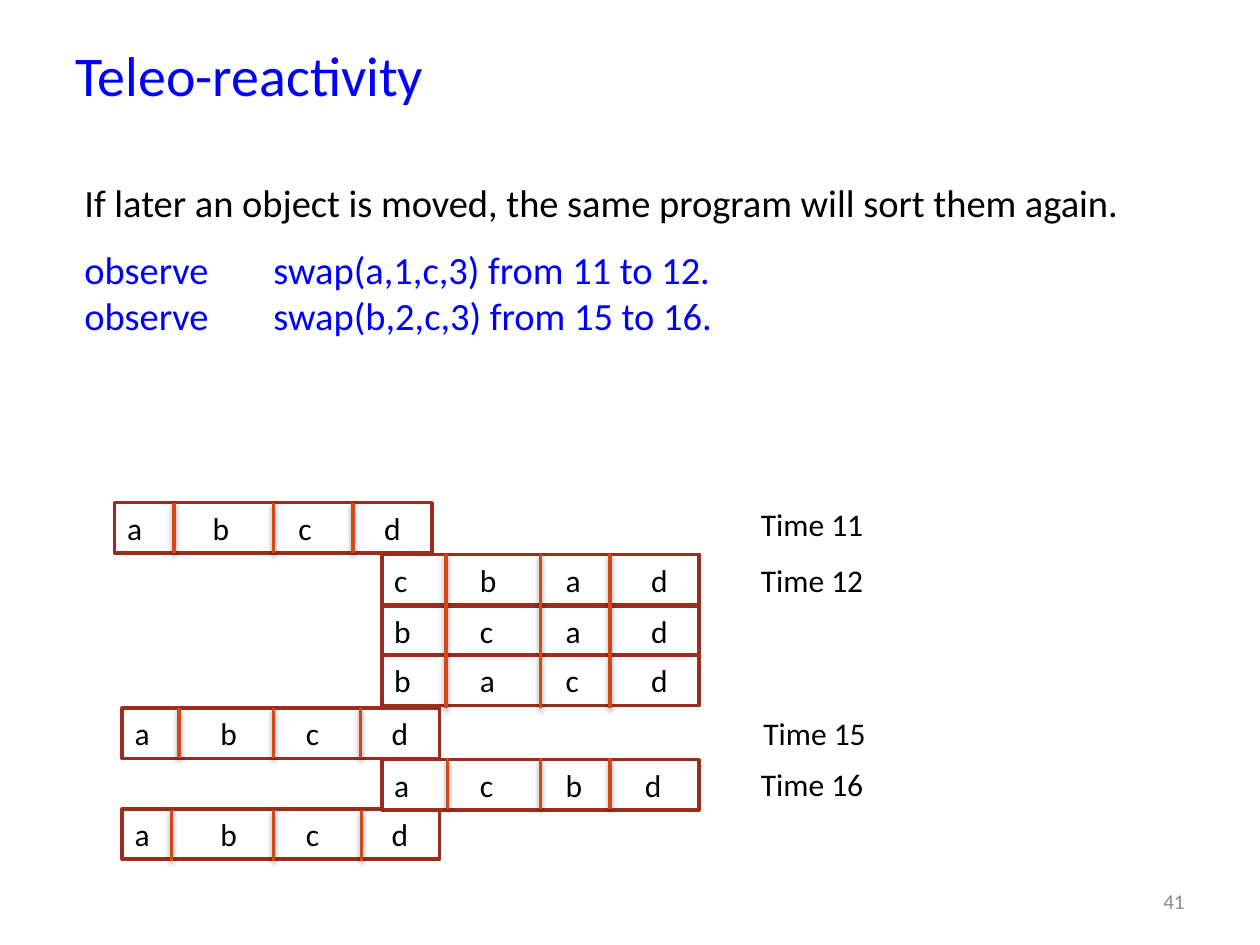
import pptx
import pptx.util
import pptx.dml.color
import pptx.enum.shapes
import pptx.enum.text
import lxml.etree
from pptx.oxml.ns import qn

Inches = pptx.util.Inches
Pt = pptx.util.Pt
RGBColor = pptx.dml.color.RGBColor
Align = pptx.enum.text.PP_ALIGN
Anchor = pptx.enum.text.MSO_ANCHOR

BLUE = RGBColor(0x00, 0x00, 0xFF)
BLACK = RGBColor(0x00, 0x00, 0x00)
WHITE = RGBColor(0xFF, 0xFF, 0xFF)
GRAY = RGBColor(0x8C, 0x8C, 0x8C)
BROWN = RGBColor(0x9B, 0x2D, 0x1F)
ORANGE = RGBColor(0xD3, 0x48, 0x17)

ROW_W, ROW_H = 2.52, 0.4
STEP = 0.68  # distance between the letters of a row

# left, top, letters, place of the last letter
ROWS = [
    (0.91, 3.99, "abcd", 3 * STEP),
    (3.03, 4.4, "cbad", 3 * STEP),
    (3.03, 4.81, "bcad", 3 * STEP),
    (3.03, 5.2, "bacd", 3 * STEP),
    (0.97, 5.62, "abcd", 3 * STEP),
    (0.97, 6.42, "abcd", 3 * STEP),
    (3.03, 6.03, "acbd", 1.99),
]
# top, height, x of each divider
CUTS = [
    (3.99, 0.4, (1.38, 2.17, 2.8)),
    (4.4, 1.22, (3.54, 4.29, 4.84)),
    (5.62, 0.4, (1.42, 2.17, 2.86)),
    (6.02, 0.4, (3.55, 4.29, 4.84)),
    (6.43, 0.4, (1.36, 2.17, 2.87)),
]
TIMES = [(5.94, 3.96, 11), (5.94, 4.4, 12), (5.96, 5.62, 15), (5.94, 6.02, 16)]


def write(frame, text, size=18, color=BLACK, align=Align.LEFT, gap=0, tabs=()):
    """Add a paragraph; gap is space before in points, tabs are in inches."""
    first = frame.paragraphs[0]
    para = first if not first.runs else frame.add_paragraph()
    para.alignment = align
    para.space_before = Pt(gap)
    run = para.add_run()
    run.text = text
    run.font.name = "Calibri"
    run.font.size = Pt(size)
    run.font.color.rgb = color
    if tabs:
        stops = lxml.etree.SubElement(para._p.get_or_add_pPr(), qn("a:tabLst"))
        for tab in tabs:
            lxml.etree.SubElement(stops, qn("a:tab"), pos=str(Inches(tab)), algn="l")


def add_box(slide, left, top, width, height, anchor=Anchor.TOP):
    box = slide.shapes.add_textbox(
        Inches(left), Inches(top), Inches(width), Inches(height))
    frame = box.text_frame
    frame.word_wrap = True
    frame.vertical_anchor = anchor
    return frame


def add_title(slide, *box):
    write(add_box(slide, *box, anchor=Anchor.MIDDLE), "Teleo-reactivity", size=32, color=BLUE)


def add_body(slide, *box):
    frame = add_box(slide, *box)
    frame.margin_left = frame.margin_right = 0
    frame.margin_top = frame.margin_bottom = 0
    write(frame, "If later an object is moved, the same program will sort them again.", size=22)
    lines = ["swap(a,1,c,3) from 11 to 12.", "swap(b,2,c,3) from 15 to 16."]
    for line, gap in zip(lines, (12, 0)):
        write(frame, "observe\t" + line, size=22, color=BLUE, gap=gap, tabs=[1.5])


def add_page(slide, *box):
    write(add_box(slide, *box, anchor=Anchor.MIDDLE), "41", size=12, color=GRAY, align=Align.RIGHT)


def add_row(slide, left, top, letters, last):
    row = slide.shapes.add_shape(
        pptx.enum.shapes.MSO_SHAPE.RECTANGLE,
        Inches(left), Inches(top), Inches(ROW_W), Inches(ROW_H))
    row.shadow.inherit = False
    row.fill.solid()
    row.fill.fore_color.rgb = WHITE
    row.line.color.rgb = BROWN
    row.line.width = Pt(2)
    row.text_frame.vertical_anchor = Anchor.TOP
    write(row.text_frame, "\t".join(letters), tabs=[STEP, 2 * STEP, last])


def add_cut(slide, x, top, height):
    """Draw an upright divider with a soft shadow below it."""
    cut = slide.shapes.add_connector(
        pptx.enum.shapes.MSO_CONNECTOR.STRAIGHT,
        Inches(x), Inches(top), Inches(x), Inches(top + height))
    cut.line.color.rgb = ORANGE
    cut.line.width = Pt(2)
    effect = lxml.etree.SubElement(cut._element.spPr, qn("a:effectLst"))
    shade = lxml.etree.SubElement(
        effect, qn("a:outerShdw"), blurRad=str(Pt(3.1)), dist=str(Pt(1.6)),
        dir="5400000", rotWithShape="0")
    color = lxml.etree.SubElement(shade, qn("a:srgbClr"), val=str(BLACK))
    lxml.etree.SubElement(color, qn("a:alpha"), val="38000")


def add_chain(slide):
    """Place the sorted rows, their dividers and the time labels."""
    for row in ROWS:
        add_row(slide, *row)
    for top, height, places in CUTS:
        for x in places:
            add_cut(slide, x, top, height)
    for left, top, time in TIMES:
        write(add_box(slide, left, top, 1.65, 0.41), f"Time {time}")


def main():
    deck = pptx.Presentation()
    deck.slide_width = Inches(10)
    deck.slide_height = Inches(7.5)
    slide = deck.slides.add_slide(deck.slide_layouts[6])
    add_title(slide, 0.5, -0.04, 9, 1.25)
    add_body(slide, 0.67, 1.42, 9, 5.43)
    add_page(slide, 7.17, 6.95, 2.33, 0.4)
    add_chain(slide)
    deck.save("out.pptx")


if __name__ == "__main__":
    main()
